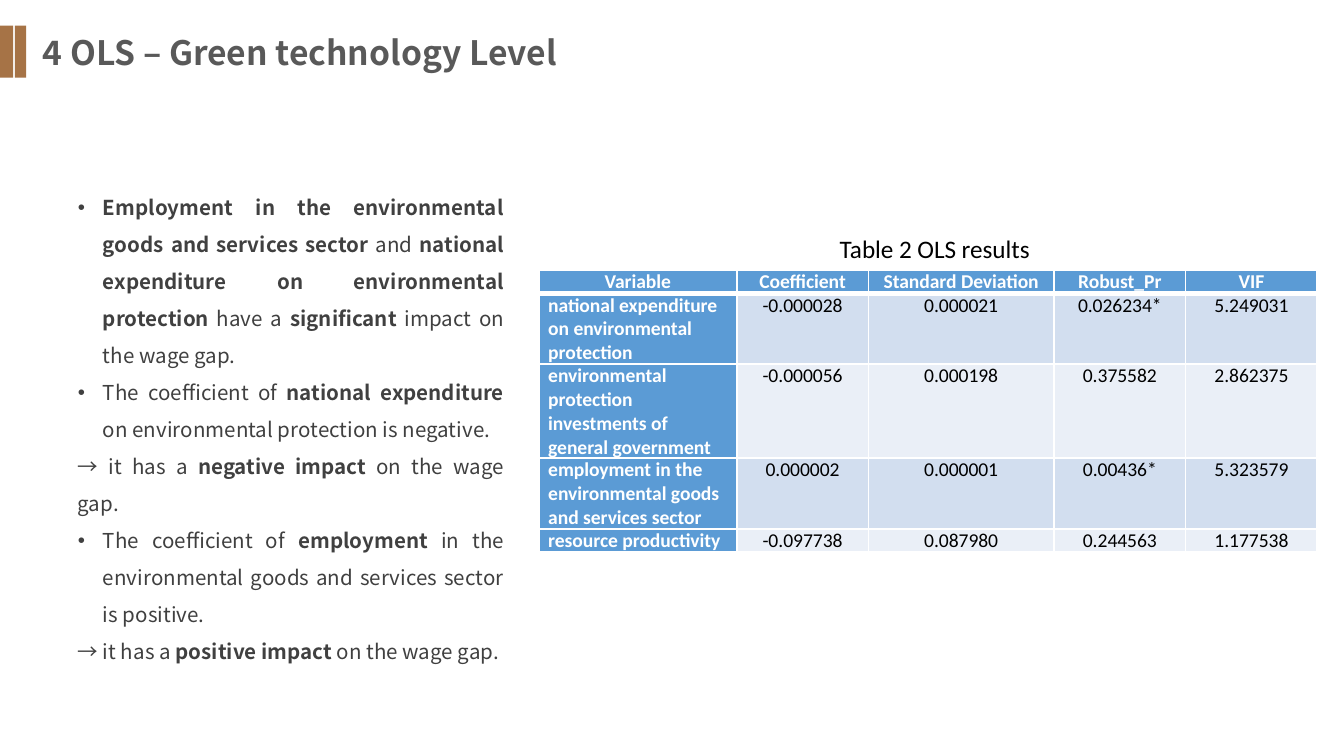
from lxml.etree import SubElement as Sub
from pptx import Presentation
from pptx.dml.color import RGBColor as Rgb
from pptx.enum.shapes import MSO_SHAPE as Kind
from pptx.enum.text import MSO_ANCHOR as Anchor, PP_ALIGN as Align
from pptx.oxml.ns import qn
from pptx.util import Pt

SANS = "Noto Sans CJK SC"
BLUE, BROWN, WHITE = "5B9BD5", "A67346", "FFFFFF"
BANDS = ["D2DEEF", "EAEFF7"]

# Bold parts stand between bars
NOTES = [
    "• |Employment in the environmental goods and services sector |and "
    "|national expenditure on environmental protection |have a "
    "|significant |impact on the wage gap.",
    "• The coefficient of |national expenditure |on environmental "
    "protection is negative.",
    "→ it has a |negative impact |on the wage gap.",
    "• The coefficient of |employment| in the environmental goods and "
    "services sector is positive.",
    "→ it has a |positive impact |on the wage gap.",
]

HEAD = ["Variable", "Coefficient", "Standard Deviation", "Robust_Pr", "VIF"]
ROWS = [
    ["national expenditure on environmental protection",
     "-0.000028", "0.000021", "0.026234*", "5.249031"],
    ["environmental protection investments of general government",
     "-0.000056", "0.000198", "0.375582", "2.862375"],
    ["employment in the environmental goods and services sector",
     "0.000002", "0.000001", "0.00436*", "5.323579"],
    ["resource productivity",
     "-0.097738", "0.087980", "0.244563", "1.177538"],
]
WIDTHS = [106, 70.5, 99.5, 70.5, 70.5]
LINES = [1, 3, 4, 3, 1]


def color(code):
    return Rgb.from_string(code)


def paint(item, code):
    item.fill.solid()
    item.fill.fore_color.rgb = color(code)


def write(para, text, size, font="Calibri", tint="000000", bold=False,
          align=Align.LEFT, space=None):
    """Fill a paragraph; bars in the text switch bold on and off."""
    para.alignment = align
    if space:
        para.line_spacing = space
    for i, part in enumerate(text.split("|")):
        if not part:
            continue
        run = para.add_run()
        run.text = part
        run.font.size = Pt(size)
        run.font.name = font
        run.font.bold = bold or i % 2 == 1
        run.font.color.rgb = color(tint)
        if font == SANS:
            Sub(run.font._element, qn("a:ea"), typeface=font)


def bullet(para):
    props = para._p.get_or_add_pPr()
    props.set("marL", str(Pt(13.5)))
    props.set("indent", str(Pt(-13.5)))
    Sub(props, qn("a:buFont"), typeface="Arial")
    Sub(props, qn("a:buChar"), char="•")


def add_box(slide, left, top, width, height):
    box = slide.shapes.add_textbox(Pt(left), Pt(top), Pt(width), Pt(height))
    box.text_frame.word_wrap = True
    return box.text_frame


def add_bar(slide, left, width):
    bar = slide.shapes.add_shape(
        Kind.RECTANGLE, Pt(left), Pt(13.7), Pt(width), Pt(28))
    bar.shadow.inherit = False
    paint(bar, BROWN)
    bar.line.fill.background()


def add_title(slide, text):
    title = slide.shapes.title
    title.left, title.top = Pt(15.8), Pt(13.7)
    title.width, title.height = Pt(377), Pt(28.8)
    frame = title.text_frame
    frame.vertical_anchor = Anchor.TOP
    write(frame.paragraphs[0], text, 18, font=SANS, tint="595959", bold=True)


def add_notes(slide):
    frame = add_box(slide, 34.6, 94.3, 242.6, 285)
    for i, note in enumerate(NOTES):
        para = frame.add_paragraph() if i else frame.paragraphs[0]
        write(para, note.removeprefix("• "), 11, font=SANS, tint="404040",
              align=Align.JUSTIFY, space=1.5)
        if note.startswith("•"):
            bullet(para)


def border(cell, base):
    props = cell._tc.get_or_add_tcPr()
    for side, width in [("L", 1), ("R", 1), ("T", 1), ("B", base)]:
        line = Sub(props, qn("a:ln" + side), w=str(Pt(width)))
        fill = Sub(line, qn("a:solidFill"))
        Sub(fill, qn("a:srgbClr"), val=WHITE)


def add_grid(slide):
    data = [HEAD] + ROWS
    table = slide.shapes.add_table(
        len(data), len(HEAD), Pt(288.7), Pt(144.7),
        Pt(sum(WIDTHS)), Pt(12.5 * sum(LINES))).table
    table.first_col = True
    for col, width in zip(table.columns, WIDTHS):
        col.width = Pt(width)
    for r, (row, count) in enumerate(zip(data, LINES)):
        table.rows[r].height = Pt(12.5 * count)
        for c, text in enumerate(row):
            cell = table.cell(r, c)
            label = r == 0 or c == 0
            cell.margin_left = cell.margin_right = Pt(5)
            cell.margin_top = cell.margin_bottom = 0
            border(cell, 1 if r else 3)
            paint(cell, BLUE if label else BANDS[(r - 1) % 2])
            write(cell.text_frame.paragraphs[0], text, 10.5, bold=label,
                  tint=WHITE if label else "000000",
                  align=Align.LEFT if r and c == 0 else Align.CENTER)


def main():
    deck = Presentation()
    deck.slide_width, deck.slide_height = Pt(720), Pt(405)
    slide = deck.slides.add_slide(deck.slide_layouts[5])

    # Heading with its two bars
    add_title(slide, "4 OLS – Green technology Level")
    add_bar(slide, 0, 7)
    add_bar(slide, 8, 6)

    # Findings on the left
    add_notes(slide)

    # Results table and its caption
    add_grid(slide)
    cap = add_box(slide, 442.8, 121.7, 184.3, 23.8)
    write(cap.paragraphs[0], "Table 2 OLS results", 13.5)

    deck.save("out.pptx")


if __name__ == "__main__":
    main()
